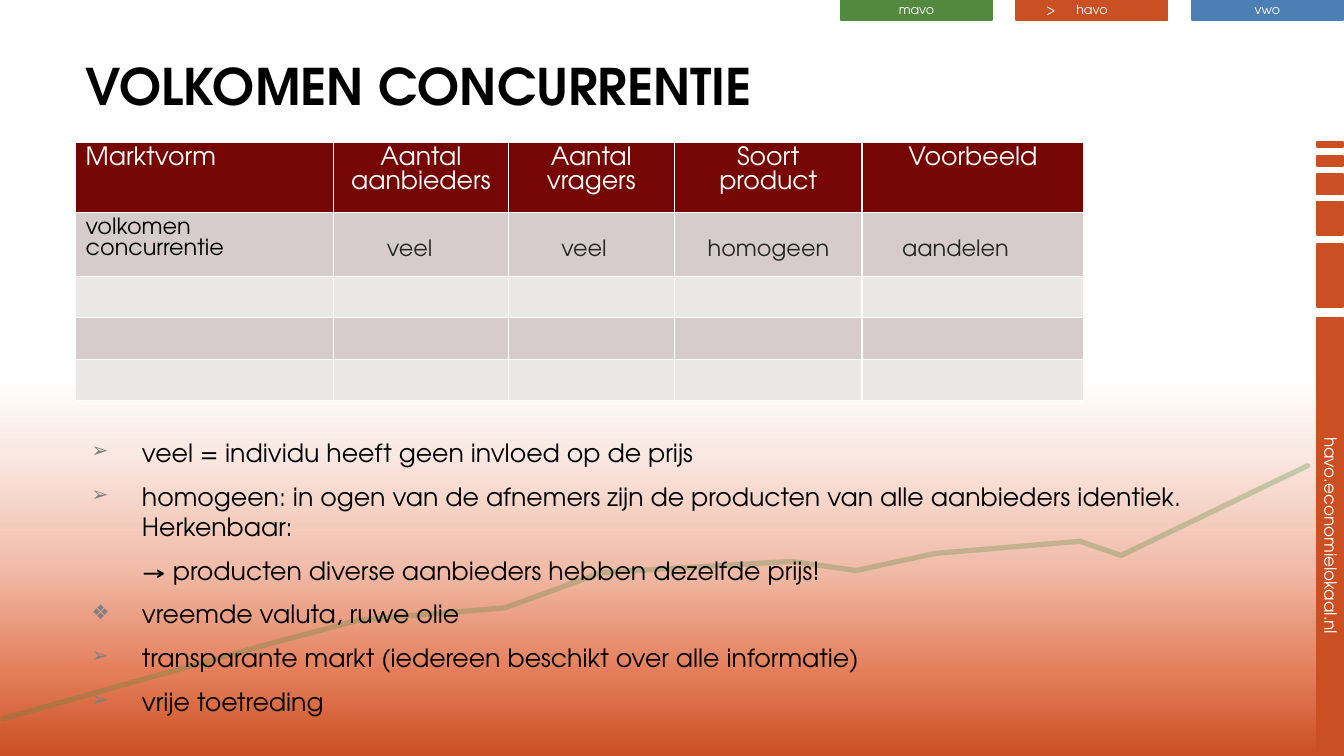
import pptx
import pptx.util
import pptx.dml.color
import pptx.enum.shapes
import pptx.enum.text
import pptx.oxml
import pptx.oxml.ns

PX = 9144  # one hundred px to the inch
FONT = "TeX Gyre Adventor"
HUES = {
    "blue": "4C7FB4", "orange": "CA4F22", "green": "52893F", "white": "FFFFFF",
    "black": "000000", "gray": "808080", "ink": "262626", "head": "760603",
    "odd": "D6CCCC", "even": "ECE7E7",
}
FADE = [(0, "CA4F22"), (11, "E47E5A"), (25, "F1BCA9"), (40, "FAE8E2"), (50, "FFFFFF")]
TABS = [("mavo", "green"), ("havo", "orange"), ("vwo", "blue")]
BARS = [(0, 5), (14, 10), (32, 20), (59, 33), (101, 63), (174, 433)]
TREND = [(1297, 462), (1112, 551), (1071, 537), (928, 549), (849, 566), (785, 557),
         (597, 568), (501, 603), (357, 615), (270, 638), (3, 713)]
COLS = [256, 173, 165, 186, 220]
HEADS = ["Marktvorm", "Aantal aanbieders", "Aantal vragers", "Soort product", "Voorbeeld"]
FACTS = [(374, 66, "veel"), (547, 66, "veel"), (692, 142, "homogeen"), (885, 127, "aandelen")]
NOTES = [
    ("➢", "veel = individu heeft geen invloed op de prijs"),
    ("➢", "homogeen: in ogen van de afnemers zijn de producten van alle "
          "aanbieders identiek. Herkenbaar:"),
    ("", "→ producten diverse aanbieders hebben dezelfde prijs!"),
    ("❖", "vreemde valuta, ruwe olie"),
    ("➢", "transparante markt (iedereen beschikt over alle informatie)"),
    ("➢", "vrije toetreding"),
]
MID = pptx.enum.text.PP_ALIGN.CENTER


def emu(*nums):
    return [pptx.util.Emu(round(n * PX)) for n in nums]


def tint(name):
    return pptx.dml.color.RGBColor.from_string(HUES[name])


def node(tag, body="", **attrs):
    """Make a drawing element from its tag, inner XML and attributes."""
    item = pptx.oxml.parse_xml(
        f'<a:{tag} {pptx.oxml.ns.nsdecls("a")}>{body}</a:{tag}>')
    for key, value in attrs.items():
        item.set(key, str(value))
    return item


def ink(hue):
    return f'<a:srgbClr val="{hue}"/>'


def style(para, size, hue, bold=False):
    font = para.font
    font.name, font.size, font.bold = FONT, pptx.util.Pt(size), bold
    font.color.rgb = tint(hue)


def paint(slide):
    """Fill the background with the upward fade."""
    fill = slide.background.fill
    fill.gradient()
    fill.gradient_angle = 90
    stops = slide.background._cSld.find(".//" + pptx.oxml.ns.qn("a:gsLst"))
    for stop in list(stops):
        stops.remove(stop)
    for spot, hue in FADE:
        stops.append(node("gs", ink(hue), pos=spot * 1000))


def block(slide, box, hue, text="", size=9):
    shape = slide.shapes.add_shape(pptx.enum.shapes.MSO_SHAPE.RECTANGLE, *emu(*box))
    shape.shadow.inherit = False
    shape.fill.solid()
    shape.fill.fore_color.rgb = shape.line.color.rgb = tint(hue)
    shape.line.width = pptx.util.Pt(1.25)
    if text:
        frame = shape.text_frame
        frame.margin_top, frame.margin_bottom = emu(0, 2)
        frame.vertical_anchor = pptx.enum.text.MSO_ANCHOR.MIDDLE
        para = frame.paragraphs[0]
        para.text, para.alignment = text, MID
        style(para, size, "white")
    return shape


def label(slide, box, text, size, hue):
    frame = slide.shapes.add_textbox(*emu(*box)).text_frame
    frame.word_wrap = False
    frame.auto_size = pptx.enum.text.MSO_AUTO_SIZE.SHAPE_TO_FIT_TEXT
    frame.text = text
    style(frame.paragraphs[0], size, hue)


def tabs(slide, left, top):
    for i, (text, hue) in enumerate(TABS):
        block(slide, (left + i * 174, top, 150, 20), hue, text)


def rail(slide, left, top, wide):
    """Stack the turned bars, with the site name on the last one."""
    for drop, tall in BARS:
        text = "havo.economielokaal.nl" if drop == BARS[-1][0] else ""
        box = (left + (wide - tall) / 2, top + drop + (tall - wide) / 2, tall, wide)
        block(slide, box, "orange", text, 12).rotation = 90


def trend(slide):
    pen = slide.shapes.build_freeform(*TREND[0], scale=PX)
    pen.add_line_segments(TREND[1:], close=False)
    shape = pen.convert_to_shape()
    shape.shadow.inherit = False
    shape.fill.background()
    shape.line.color.rgb = tint("green")
    shape.line.width = pptx.util.Pt(3.75)
    line = shape.line._ln
    line.set("cap", "rnd")
    line.find(".//" + pptx.oxml.ns.qn("a:srgbClr")).append(node("alpha", val=30000))


def title(slide, box):
    shape = slide.shapes.title
    shape.left, shape.top, shape.width, shape.height = emu(*box)
    frame = shape.text_frame
    frame.text = "VOLKOMEN CONCURRENTIE"
    frame.vertical_anchor = pptx.enum.text.MSO_ANCHOR.TOP
    para = frame.paragraphs[0]
    para.alignment = pptx.enum.text.PP_ALIGN.LEFT
    style(para, 36, "black", True)


def notes(slide, box):
    frame = slide.shapes.add_textbox(*emu(*box)).text_frame
    frame.word_wrap = True
    for i, (mark, text) in enumerate(NOTES):
        para = frame.add_paragraph() if i else frame.paragraphs[0]
        para.text = text
        props = para._p.get_or_add_pPr()
        props.set("marL", str(56 * PX))
        if mark:
            props.set("indent", str(-50 * PX))
            props.append(node("buClr", ink(HUES["gray"])))
            props.append(node("buSzPct", val=80000))
            props.append(node("buFont", typeface=FONT))
            props.append(node("buChar", char=mark))
        para.space_before = pptx.util.Pt(3.6 if i else 0)
        para.space_after = pptx.util.Pt(6)
        style(para, 18, "black")


def edge(cell):
    """Draw thin white lines on all four sides."""
    props = cell._tc.get_or_add_tcPr()
    for i, side in enumerate("LRTB"):
        fill = f'<a:solidFill>{ink(HUES["white"])}</a:solidFill>'
        props.insert(i, node("ln" + side, fill, w=12700))


def grid(slide, left, top):
    rows = [HEADS, ["volkomen concurrentie"]] + [[]] * 3
    box = emu(left, top, sum(COLS), 41 * len(rows))
    table = slide.shapes.add_table(len(rows), len(COLS), *box).table
    for col, wide in zip(table.columns, COLS):
        col.width = emu(wide)[0]
    for r, row in enumerate(rows):
        for c in range(len(COLS)):
            cell = table.cell(r, c)
            cell.fill.solid()
            cell.fill.fore_color.rgb = tint("odd" if r % 2 else "even" if r else "head")
            edge(cell)
            para = cell.text_frame.paragraphs[0]
            para.text = row[c] if c < len(row) else ""
            if c and not r:
                para.alignment = MID
            style(para, 16 if r else 18, "black" if r else "white")


def main():
    deck = pptx.Presentation()
    deck.slide_width, deck.slide_height = emu(1333, 750)
    slide = deck.slides.add_slide(deck.slide_layouts[5])
    paint(slide)
    tabs(slide, 834, 0)
    rail(slide, 1306, 141, 26)
    trend(slide)
    label(slide, (1028, -3, 36, 25), ">>", 9, "white")
    title(slide, (75, 50, 1003, 89))
    notes(slide, (75, 429, 1144, 293))
    grid(slide, 75, 141)
    for left, wide, text in FACTS:
        label(slide, (left, 227, wide, 37), text, 16, "ink")
    deck.save("out.pptx")


if __name__ == "__main__":
    main()
